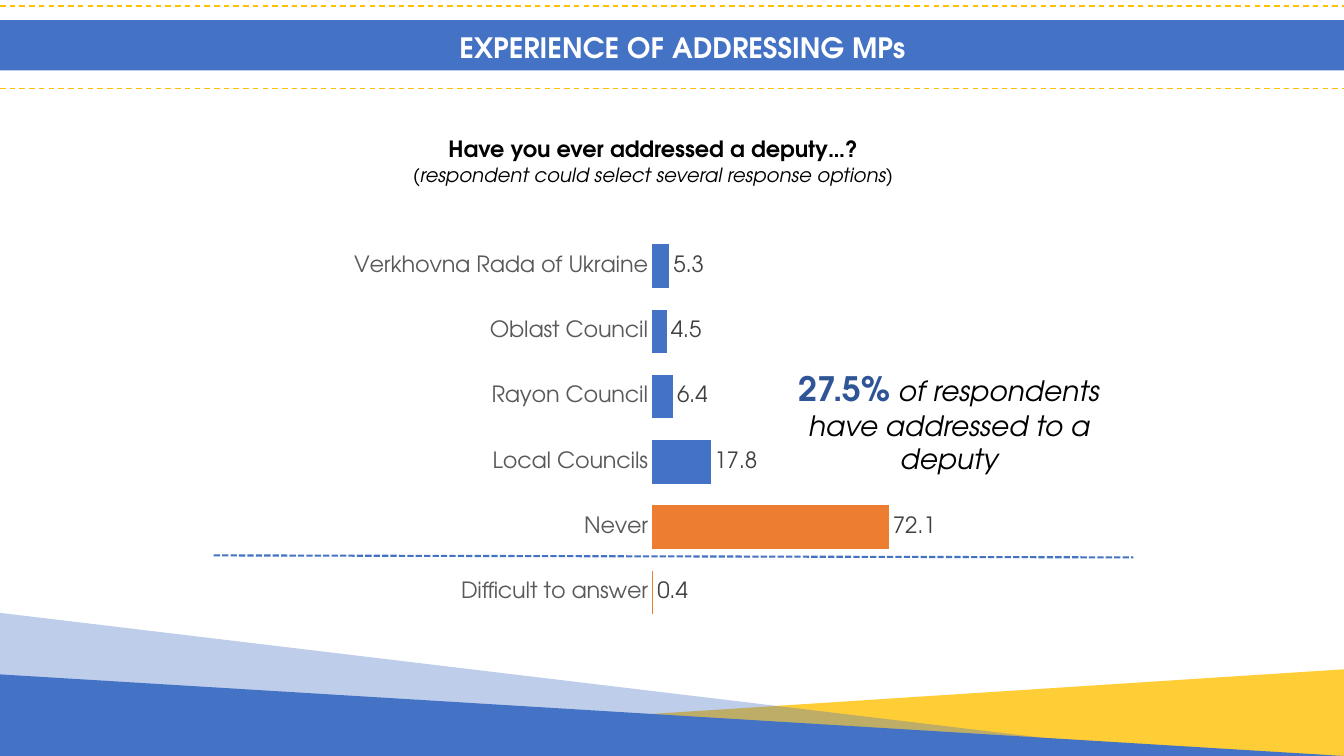
from lxml.etree import SubElement
from pptx import Presentation
from pptx.chart.data import CategoryChartData
from pptx.dml.color import RGBColor
from pptx.enum.chart import XL_CHART_TYPE, XL_LABEL_POSITION, XL_TICK_LABEL_POSITION, XL_TICK_MARK
from pptx.enum.dml import MSO_LINE
from pptx.enum.shapes import MSO_CONNECTOR, MSO_SHAPE
from pptx.enum.text import MSO_ANCHOR, MSO_AUTO_SIZE, PP_ALIGN
from pptx.oxml import parse_xml
from pptx.oxml.ns import nsdecls, qn
from pptx.util import Inches, Pt

FONT = "TeX Gyre Adventor"
WIDTH, HEIGHT = 13.33, 7.5
BLUE = RGBColor(0x44, 0x72, 0xC4)
DARK_BLUE = RGBColor(0x2F, 0x55, 0x97)
YELLOW = RGBColor(0xFF, 0xC0, 0x00)
ORANGE = RGBColor(0xED, 0x7D, 0x31)
WHITE = RGBColor(0xFF, 0xFF, 0xFF)
BLACK = RGBColor(0x00, 0x00, 0x00)
AXIS_GREY = RGBColor(0x59, 0x59, 0x59)
LABEL_GREY = RGBColor(0x40, 0x40, 0x40)

ANSWERS = {
    "Verkhovna Rada of Ukraine": 5.3,
    "Oblast Council": 4.5,
    "Rayon Council": 6.4,
    "Local Councils": 17.8,
    "Never": 72.1,
    "Difficult to answer": 0.4,
}
NOT_ADDRESSED = ("Never", "Difficult to answer")


def style_font(font, size, color, bold=False, italic=False):
    font.name = FONT
    font.size = Pt(size)
    font.color.rgb = color
    font.bold = bold
    font.italic = italic


def place(shape, left, top, width, height):
    shape.left, shape.top = Inches(left), Inches(top)
    shape.width, shape.height = Inches(width), Inches(height)


def add_filled_shape(slide, kind, box, color, opacity=100):
    shape = slide.shapes.add_shape(kind, *map(Inches, box))
    shape.shadow.inherit = False
    shape.line.fill.background()
    shape.fill.solid()
    shape.fill.fore_color.rgb = color
    if opacity < 100:
        color_element = shape.fill._xPr.find(qn("a:solidFill"))[0]
        SubElement(color_element, qn("a:alpha"), val=str(opacity * 1000))
    return shape


def add_wedge(slide, width, height, color, opacity=100, peak=0):
    """Add a triangle on the bottom edge, with its peak at a share of its width."""
    box = (0, HEIGHT - height, width, height)
    wedge = add_filled_shape(slide, MSO_SHAPE.ISOSCELES_TRIANGLE, box, color, opacity)
    wedge.adjustments[0] = peak


def add_dashed_line(slide, start, end, color, weight, dash):
    line = slide.shapes.add_connector(MSO_CONNECTOR.STRAIGHT, *map(Inches, start + end))
    line.line.color.rgb = color
    line.line.width = Pt(weight)
    line.line.dash_style = dash
    SubElement(line.element.spPr, qn("a:effectLst"))


def add_text_box(slide, box, anchor=MSO_ANCHOR.TOP):
    frame = slide.shapes.add_textbox(*map(Inches, box)).text_frame
    frame.word_wrap = True
    frame.vertical_anchor = anchor
    frame.paragraphs[0].alignment = PP_ALIGN.CENTER
    return frame


def add_background(slide):
    add_wedge(slide, WIDTH, 0.86, YELLOW, opacity=79, peak=1)
    add_wedge(slide, WIDTH, 0.81, BLUE)
    add_wedge(slide, 11.85, 1.42, BLUE, opacity=35)
    add_filled_shape(slide, MSO_SHAPE.RECTANGLE, (0, 0.2, WIDTH, 0.5), BLUE)
    for top in (0.06, 0.88):
        add_dashed_line(slide, (0, top), (WIDTH, top), YELLOW, 1, MSO_LINE.DASH)


def add_title(slide, text):
    title = slide.shapes.title
    title.element.getparent().append(title.element)  # in front of the banner
    place(title, 1.14, 0.25, 11.26, 0.44)
    frame = title.text_frame
    frame.text = text
    frame.auto_size = MSO_AUTO_SIZE.NONE
    frame.vertical_anchor = MSO_ANCHOR.MIDDLE
    frame.paragraphs[0].alignment = PP_ALIGN.CENTER
    style_font(frame.paragraphs[0].font, 20, WHITE, bold=True)


def add_question(slide):
    frame = add_text_box(slide, (0.85, 1.29, 11.26, 0.61), MSO_ANCHOR.MIDDLE)
    question = frame.paragraphs[0]
    question.text = "Have you ever addressed a deputy…?"
    style_font(question.font, 16, BLACK, bold=True)
    hint = frame.add_paragraph()
    hint.text = "(respondent could select several response options)"
    hint.alignment = PP_ALIGN.CENTER
    style_font(hint.font, 14, BLACK, italic=True)


def add_finding(slide):
    paragraph = add_text_box(slide, (7.56, 3.6, 3.71, 1.18)).paragraphs[0]
    share = paragraph.add_run()
    share.text = "27.5%"
    style_font(share.font, 24, DARK_BLUE, bold=True)
    statement = paragraph.add_run()
    statement.text = " of respondents have addressed to a deputy"
    style_font(statement.font, 20, BLACK, italic=True)


def set_plot_area(chart, left, top, width, height):
    """Fix the inner plot area, given in percent of the chart's size."""
    plot_area = chart._chartSpace.chart.plotArea
    for layout in plot_area.findall(qn("c:layout")):
        plot_area.remove(layout)
    sizes = "".join(
        f'<c:{tag} val="{percent / 100:.3f}"/>'
        for tag, percent in zip("xywh", (left, top, width, height))
    )
    plot_area.insert(0, parse_xml(
        f'<c:layout {nsdecls("c")}><c:manualLayout><c:layoutTarget val="inner"/>'
        f'<c:xMode val="edge"/><c:yMode val="edge"/>{sizes}</c:manualLayout></c:layout>'
    ))


def add_answer_chart(slide):
    data = CategoryChartData(number_format="0.0")
    data.categories = list(ANSWERS)
    data.add_series("Series 1", list(ANSWERS.values()))
    box = map(Inches, (2.72, 2.13, 7.51, 4.23))
    chart = slide.shapes.add_chart(XL_CHART_TYPE.BAR_CLUSTERED, *box, data).chart
    chart.has_legend = chart.has_title = False
    style_font(chart.font, 11, BLACK)
    set_plot_area(chart, 49.9, 4.4, 43.4, 91.9)

    categories = chart.category_axis
    categories.reverse_order = True
    categories.major_tick_mark = categories.minor_tick_mark = XL_TICK_MARK.NONE
    categories.tick_label_position = XL_TICK_LABEL_POSITION.NEXT_TO_AXIS
    categories.format.line.fill.background()
    style_font(categories.tick_labels.font, 16, AXIS_GREY)
    values = chart.value_axis
    values.minimum_scale, values.maximum_scale = 0, 100
    values.major_tick_mark = values.minor_tick_mark = XL_TICK_MARK.NONE
    values.has_major_gridlines = False
    values.visible = False

    plot = chart.plots[0]
    plot.vary_by_categories = False
    plot.gap_width, plot.overlap = 50, -10
    series = plot.series[0]
    series.invert_if_negative = False
    series.format.fill.solid()
    series.format.fill.fore_color.rgb = BLUE
    for index, answer in enumerate(ANSWERS):
        if answer in NOT_ADDRESSED:
            fill = series.points[index].format.fill
            fill.solid()
            fill.fore_color.rgb = ORANGE
    labels = series.data_labels
    labels.show_value = True
    labels.position = XL_LABEL_POSITION.OUTSIDE_END
    labels.number_format, labels.number_format_is_linked = "0.0", False
    style_font(labels.font, 16, LABEL_GREY)


def main():
    presentation = Presentation()
    presentation.slide_width = Inches(WIDTH)
    presentation.slide_height = Inches(HEIGHT)
    slide = presentation.slides.add_slide(presentation.slide_layouts.get_by_name("Title Only"))
    add_background(slide)
    add_title(slide, "EXPERIENCE OF ADDRESSING MPs")
    add_question(slide)
    add_answer_chart(slide)
    add_finding(slide)
    add_dashed_line(slide, (2.12, 5.51), (11.24, 5.53), BLUE, 1.5, MSO_LINE.SQUARE_DOT)
    presentation.save("out.pptx")


if __name__ == "__main__":
    main()
